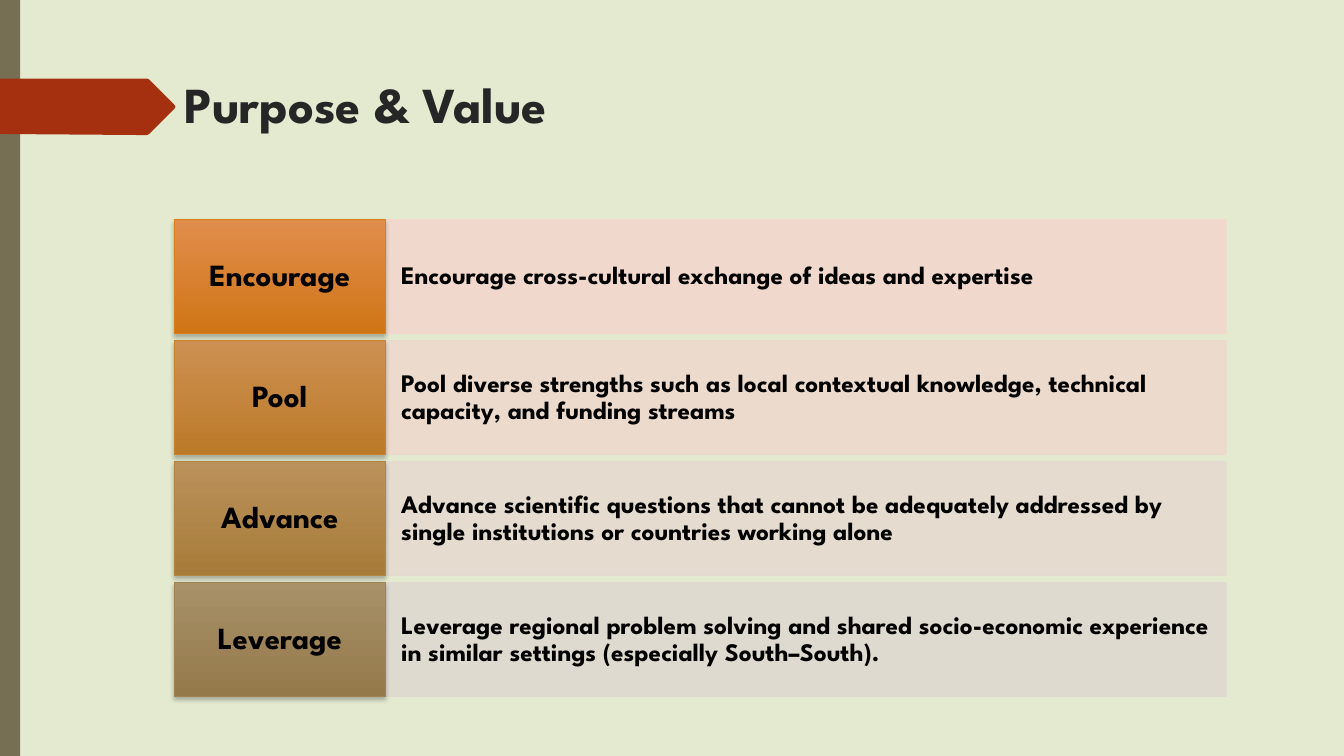
from lxml import etree
from pptx import Presentation
from pptx import util as u
from pptx.dml import color
from pptx.enum import shapes, text
from pptx.oxml import ns

FONT = "League Spartan"
ROWS = [
    ("Encourage", "Encourage cross-cultural exchange of ideas and expertise",
     "E18D4C", "CF7516", "DE7E18", "F2D8CC"),
    ("Pool", "Pool diverse strengths such as local contextual knowledge, "
     "technical capacity, and funding streams",
     "CE9052", "BB7A28", "C9832B", "EDD9CD"),
    ("Advance", "Advance scientific questions that cannot be adequately "
     "addressed by single institutions or countries working alone",
     "BB915B", "A77C3A", "B4853E", "E6DACF"),
    ("Leverage", "Leverage regional problem solving and shared socio-economic "
     "experience in similar settings (especially South–South).",
     "A89068", "947A4B", "9F8351", "DFD9D1"),
]


def rgb(code):
    return color.RGBColor.from_string(code)


def assign(item, values):
    for name, value in values.items():
        setattr(item, name, value)


def add(parent, tag, **values):
    return etree.SubElement(parent, ns.qn(tag), values)


def paint(shape, fill, line=None):
    shape.shadow.inherit = False
    shape.fill.solid()
    shape.fill.fore_color.rgb = rgb(fill)
    if line:
        shape.line.color.rgb = rgb(line)
        shape.line.width = u.Pt(0.75)
    else:
        shape.line.fill.background()


def block(slide, box, fill, line=None):
    shape = slide.shapes.add_shape(
        shapes.MSO_SHAPE.RECTANGLE, *map(u.Inches, box))
    paint(shape, fill, line)
    return shape


def write(shape, words, size, ink, side, edge, align, anchor, space):
    frame = shape.text_frame
    assign(frame, {
        "word_wrap": True, "vertical_anchor": anchor,
        "margin_left": u.Inches(side), "margin_right": u.Inches(side),
        "margin_top": u.Inches(edge), "margin_bottom": u.Inches(edge)})
    para = frame.paragraphs[0]
    assign(para, {"alignment": align, "line_spacing": space})
    run = para.add_run()
    run.text = words
    assign(run.font, {"name": FONT, "size": u.Pt(size), "bold": True})
    run.font.color.rgb = rgb(ink)


def fade(shape):
    for tint in shape._element.spPr.iter(ns.qn("a:srgbClr")):
        add(tint, "a:alpha", val="90000")


def shade(shape, top, base):
    shape.fill.gradient()
    shape.fill.gradient_angle = 270
    for stop, code in zip(shape.fill.gradient_stops, (top, base)):
        stop.color.rgb = rgb(code)
    effect = shape._element.spPr.find(ns.qn("a:effectLst"))
    cast = add(effect, "a:outerShdw", blurRad=str(u.Pt(3)),
               dist=str(u.Pt(2)), dir="5400000", rotWithShape="0")
    tint = add(cast, "a:srgbClr", val="000000")
    add(tint, "a:alpha", val="25000")


def arrow(slide):
    points = [(0, 0.78), (1.46, 0.78), (1.48, 0.79), (1.73, 1.04),
              (1.74, 1.06), (1.73, 1.08), (1.48, 1.33), (1.46, 1.34),
              (1.36, 1.34), (0, 1.33)]
    first, *rest = [(u.Inches(x), u.Inches(y)) for x, y in points]
    path = slide.shapes.build_freeform(*first)
    path.add_line_segments(rest, close=True)
    paint(path.convert_to_shape(), "A53010")


def title(slide, words):
    box = slide.shapes.add_textbox(*map(u.Inches, (1.73, 0.68, 10.85, 1.4)))
    write(box, words, 36, "262626", 0.1, 0.05,
          text.PP_ALIGN.LEFT, text.MSO_ANCHOR.TOP, 1)


def row(slide, top, label, words, light, dark, line, pale):
    mid = text.MSO_ANCHOR.MIDDLE
    panel = block(slide, (3.82, top, 8.34, 1.13), pale, pale)
    fade(panel)
    write(panel, words, 18, "000000", 0.16, 0.29,
          text.PP_ALIGN.LEFT, mid, 0.9)
    tile = block(slide, (1.73, top, 2.09, 1.13), light, line)
    shade(tile, light, dark)
    write(tile, label, 22, "000000", 0.11, 0.11,
          text.PP_ALIGN.CENTER, mid, 0.9)


def main():
    deck = Presentation()
    assign(deck, {"slide_width": u.Inches(13.33),
                  "slide_height": u.Inches(7.5)})
    slide = deck.slides.add_slide(deck.slide_layouts[6])
    block(slide, (0, 0, 13.33, 7.5), "E3EACF")
    title(slide, "Purpose & Value")
    block(slide, (0, 0, 0.2, 7.5), "766F54")
    arrow(slide)
    for i, entry in enumerate(ROWS):
        row(slide, 2.18 + 1.2 * i, *entry)
    deck.save("out.pptx")


if __name__ == "__main__":
    main()
